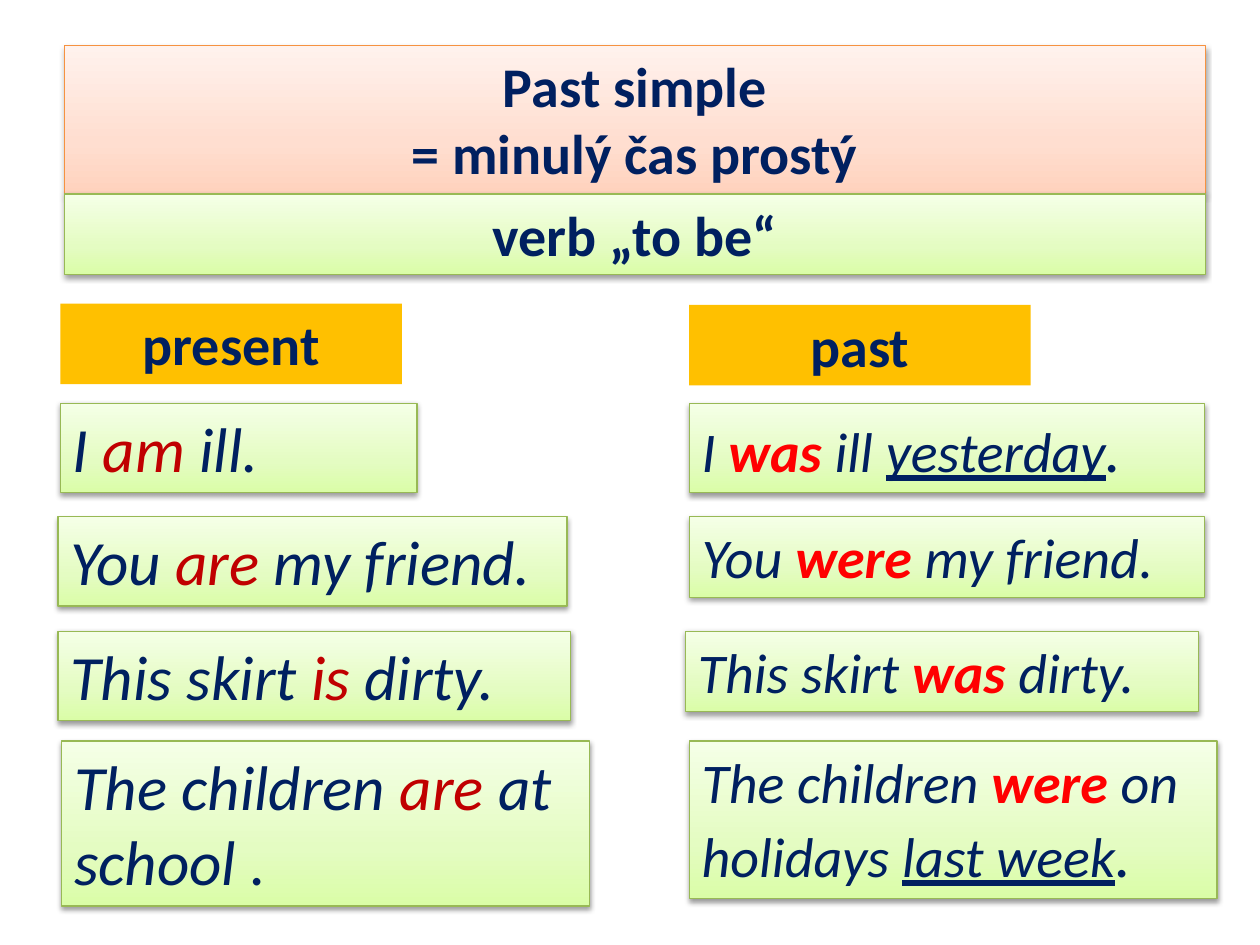
from dataclasses import dataclass

from lxml import etree
from pptx import Presentation
from pptx.dml.color import RGBColor
from pptx.enum.text import MSO_ANCHOR, MSO_AUTO_SIZE, PP_ALIGN
from pptx.oxml.ns import qn
from pptx.util import Inches, Pt

CENTER, LEFT = PP_ALIGN.CENTER, PP_ALIGN.LEFT
TOP = MSO_ANCHOR.TOP
GROW = MSO_AUTO_SIZE.SHAPE_TO_FIT_TEXT


@dataclass(frozen=True)
class Theme:
    font: str = "Calibri"
    ink: str = "002060"
    present_verb: str = "C00000"
    past_verb: str = "FF0000"
    label: str = "FFC000"
    green: tuple = ("DAFDA7", "E4FCC2", "F5FFE7")
    green_line: str = "98B955"
    peach: tuple = ("FFD2BD", "FFDED0", "FFF2ED")
    peach_line: str = "F69240"
    heading_size: int = 32
    present_size: int = 36
    past_size: int = 32
    full_stop_size: int = 36


THEME = Theme()


def write(box, *paragraphs, align=LEFT, **base):
    """Fill box with paragraphs; each is a list of (text, format overrides)."""
    frame = box.text_frame
    frame.word_wrap = True
    frame.auto_size = GROW
    frame.vertical_anchor = TOP
    for index, pieces in enumerate(paragraphs):
        paragraph = frame.paragraphs[0] if index == 0 else frame.add_paragraph()
        paragraph.alignment = align
        for text, changes in pieces:
            look = {**base, **changes}
            run = paragraph.add_run()
            run.text = text
            run.font.name = THEME.font
            run.font.size = Pt(look["size"])
            run.font.color.rgb = RGBColor.from_string(look.get("color", THEME.ink))
            run.font.bold = look.get("bold", False)
            run.font.italic = look.get("italic", False)
            run.font.underline = look.get("underline", False)


def style_panel(box, colors, line):
    """Give box a bottom-to-top gradient, a thin outline and a soft shadow."""
    box.fill.gradient()
    box.fill.gradient_angle = 90
    properties = box._element.spPr
    stops = properties.find(qn("a:gradFill")).find(qn("a:gsLst"))
    for stop in list(stops):
        stops.remove(stop)
    for position, color in zip((0, 35, 100), colors):
        stop = etree.SubElement(stops, qn("a:gs"), pos=str(position * 1000))
        etree.SubElement(stop, qn("a:srgbClr"), val=color)
    box.line.color.rgb = RGBColor.from_string(line)
    box.line.width = Pt(0.75)
    box.shadow.inherit = False
    shadow = etree.SubElement(
        properties.find(qn("a:effectLst")), qn("a:outerShdw"),
        blurRad=str(Pt(3.1)), dist=str(Pt(1.6)), dir="5400000", rotWithShape="0")
    shade = etree.SubElement(shadow, qn("a:srgbClr"), val="000000")
    etree.SubElement(shade, qn("a:alpha"), val="38000")


prs = Presentation()
prs.slide_width, prs.slide_height = Inches(10), Inches(7.5)
slide = prs.slides.add_slide(prs.slide_layouts[5])

# Heading: title and the verb it deals with
heading = dict(align=CENTER, size=THEME.heading_size, bold=True)
title = slide.shapes.title
title.left, title.top = Inches(0.51), Inches(0.36)
title.width, title.height = Inches(9.06), Inches(1.18)
style_panel(title, THEME.peach, THEME.peach_line)
write(title, [("Past simple", {})], [("= minulý čas prostý", {})], **heading)

subtitle = slide.shapes.add_textbox(Inches(0.51), Inches(1.54), Inches(9.06), Inches(0.64))
style_panel(subtitle, THEME.green, THEME.green_line)
write(subtitle, [("verb „to be“", {})], **heading)

# Column labels
for tense, left, top in (("present", 0.48, 2.41), ("past", 5.47, 2.42)):
    label = slide.shapes.add_textbox(Inches(left), Inches(top), Inches(2.71), Inches(0.64))
    label.fill.solid()
    label.fill.fore_color.rgb = RGBColor.from_string(THEME.label)
    write(label, [(tense, {})], **heading)

# Example sentences, one row per pair
plain = {}
now = dict(color=THEME.present_verb)
then = dict(color=THEME.past_verb, bold=True)
time = dict(underline=True)
stop = dict(size=THEME.full_stop_size)

row_tops = (3.2, 4.1, 5.01, 5.88)
present_examples = (
    (0.48, 2.83, 0.71, [("I ", plain), ("am ", now), ("ill.", plain)]),
    (0.46, 4.04, 0.71, [("You ", plain), ("are", now), (" my friend.", plain)]),
    (0.46, 4.07, 0.71, [("This skirt ", plain), ("is ", now), ("dirty.", plain)]),
    (0.49, 4.19, 1.31, [("The children ", plain), ("are ", now), ("at school .", plain)]),
)
past_examples = (
    (5.47, 4.09, 0.71, [("I ", plain), ("was ", then), ("ill ", plain),
                        ("yesterday", time), (".", stop)]),
    (5.47, 4.09, 0.64, [("You ", plain), ("were ", then), ("my friend.", plain)]),
    (5.44, 4.07, 0.64, [("This skirt ", plain), ("was ", then), ("dirty.", plain)]),
    (5.47, 4.19, 1.25, [("The children ", plain), ("were ", then), ("on holidays ", plain),
                        ("last week", time), (".", stop)]),
)
for examples, size in ((present_examples, THEME.present_size),
                       (past_examples, THEME.past_size)):
    for top, (left, width, height, sentence) in zip(row_tops, examples):
        example = slide.shapes.add_textbox(
            Inches(left), Inches(top), Inches(width), Inches(height))
        style_panel(example, THEME.green, THEME.green_line)
        write(example, sentence, size=size, italic=True)

prs.save("out.pptx")
